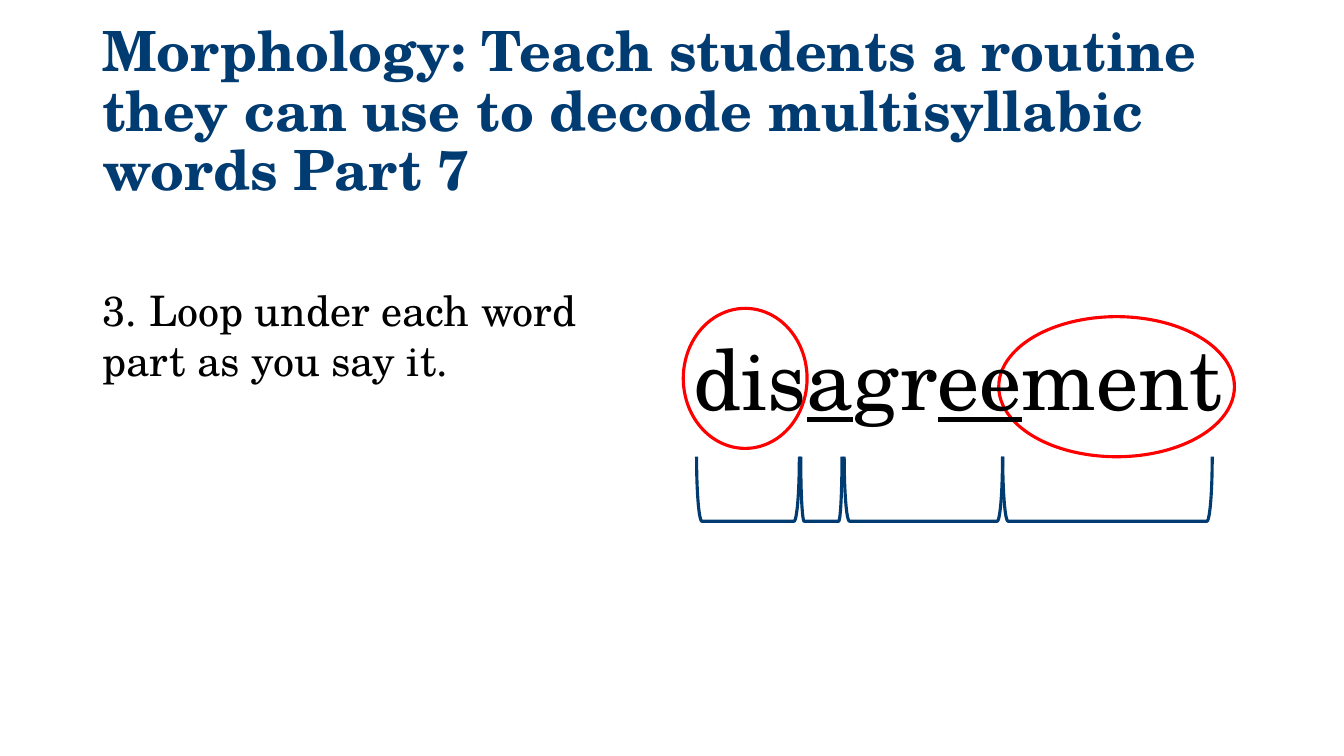
import pptx
import pptx.dml.color
import pptx.enum.shapes
import pptx.enum.text
import pptx.util
from pptx.util import Cm

FONT = "TeX Gyre Schola"
NAVY, TITLE_BLUE, RED, BLACK = "003C71", "003B71", "FF0000", "000000"
LOOP_DEPTH, LOOP_MIDDLE = 1.63, 12.32


def colour(hex_code):
    return pptx.dml.color.RGBColor.from_string(hex_code)


def style_font(font, size, hex_code, bold=False):
    font.name = FONT
    font.size = pptx.util.Pt(size)
    font.bold = bold
    font.color.rgb = colour(hex_code)


def add_outline(slide, preset, left, top, width, height, hex_code):
    outline = slide.shapes.add_shape(preset, Cm(left), Cm(top), Cm(width), Cm(height))
    outline.shadow.inherit = False
    outline.fill.background()
    outline.line.color.rgb = colour(hex_code)
    outline.line.width = pptx.util.Pt(2.25)
    return outline


def add_affix_circle(slide, left, top, width, height):
    oval = pptx.enum.shapes.MSO_SHAPE.OVAL
    add_outline(slide, oval, left, top, width, height, RED)


def add_loop(slide, centre, span):
    """Draw a bracket turned to open upwards, spanning one word part."""
    loop = add_outline(slide, pptx.enum.shapes.MSO_SHAPE.LEFT_BRACKET,
                       centre - LOOP_DEPTH / 2, LOOP_MIDDLE - span / 2,
                       LOOP_DEPTH, span, NAVY)
    loop.adjustments[0] = 0.083
    loop.rotation = 270


def add_text(slide, left, top, width, height, size, pieces):
    """Add one paragraph from (text, underlined) pieces."""
    box = slide.shapes.add_textbox(Cm(left), Cm(top), Cm(width), Cm(height))
    frame = box.text_frame
    frame.word_wrap = True
    frame.margin_left = frame.margin_right = Cm(0.25)
    frame.margin_top = frame.margin_bottom = Cm(0.25)
    paragraph = frame.paragraphs[0]
    style_font(paragraph.font, size, BLACK)
    for text, underlined in pieces:
        run = paragraph.add_run()
        run.text = text
        style_font(run.font, size, BLACK)
        run.font.underline = underlined


def set_title(slide, text):
    title = slide.shapes.title
    title.left, title.top, title.width, title.height = Cm(2.33), Cm(1.01), Cm(29.21), Cm(3.68)
    frame = title.text_frame
    frame.text = text
    frame.auto_size = pptx.enum.text.MSO_AUTO_SIZE.NONE
    frame.vertical_anchor = pptx.enum.text.MSO_ANCHOR.MIDDLE
    paragraph = frame.paragraphs[0]
    paragraph.alignment = pptx.enum.text.PP_ALIGN.LEFT
    paragraph.line_spacing = 0.9
    style_font(paragraph.font, 39.6, TITLE_BLUE, bold=True)


def main():
    deck = pptx.Presentation()
    deck.slide_width, deck.slide_height = Cm(33.87), Cm(19.05)
    slide = deck.slides.add_slide(deck.slide_layouts[5])

    set_title(slide, "Morphology: Teach students a routine they can use "
                     "to decode multisyllabic words Part 7")

    # Loops under dis, a, gree and ment
    for centre, span in ((18.85, 2.59), (20.7, 1.04), (23.27, 3.99), (27.91, 5.28)):
        add_loop(slide, centre, span)

    # Circles around the prefix and the suffix
    add_affix_circle(slide, 17.22, 7.77, 3.12, 3.53)
    add_affix_circle(slide, 25.17, 7.98, 5.94, 3.53)

    # Example word with its vowels underlined
    add_text(slide, 17.22, 7.98, 14.88, 3.07, 60,
             [("dis", False), ("a", True), ("gr", False), ("ee", True), ("ment", False)])

    # Routine step
    add_text(slide, 2.33, 6.91, 13.13, 3.07, 30,
             [("3. Loop under each word part as you say it.", False)])

    deck.save("out.pptx")


if __name__ == "__main__":
    main()
